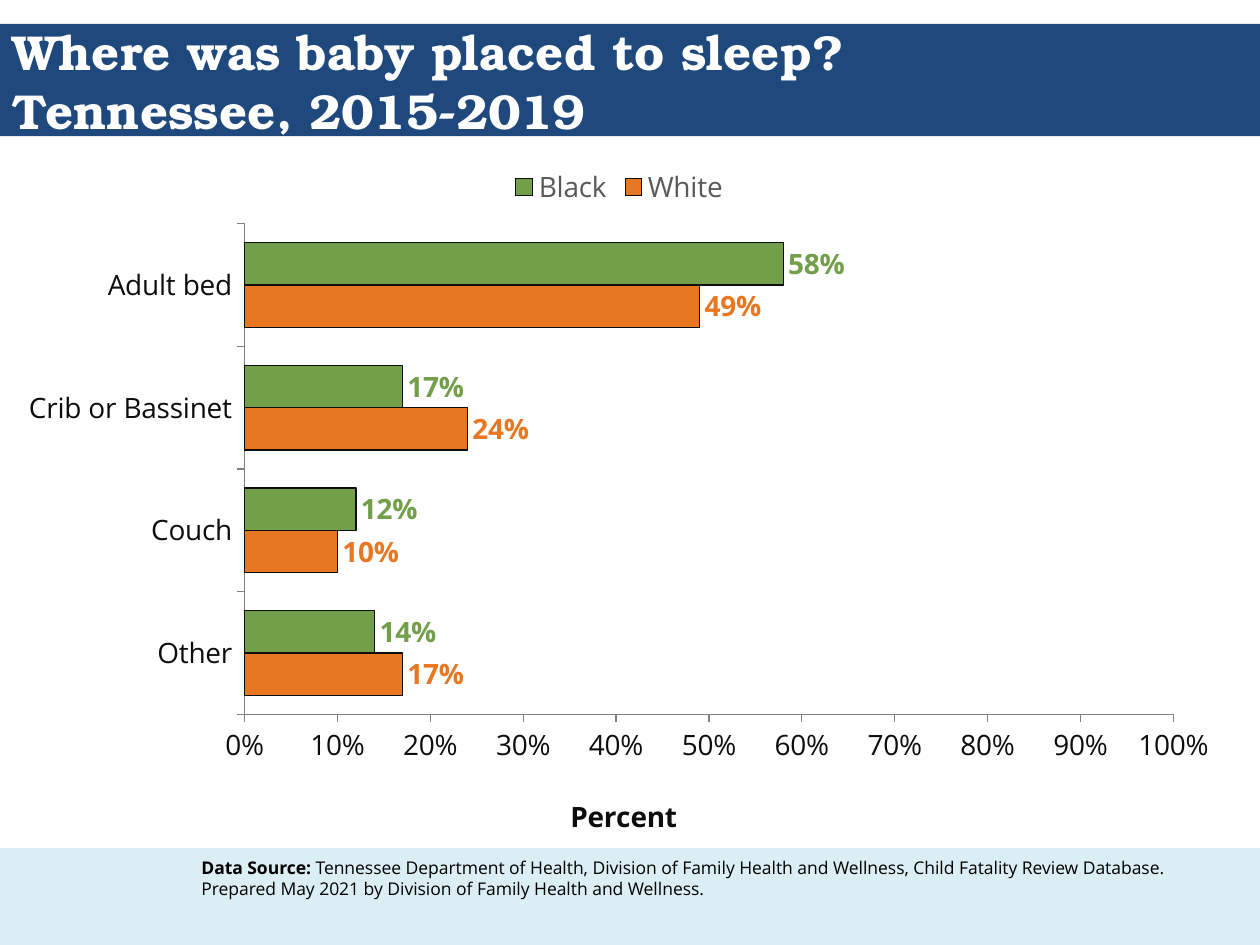
"""Build the slide on where babies were placed to sleep, by race."""
import pptx
import pptx.chart.data
import pptx.dml.color
import pptx.enum.chart
import pptx.enum.text
import pptx.enum.shapes
import pptx.oxml
import pptx.util
from pptx.util import Inches

TITLE = "Where was baby placed to sleep?\vTennessee, 2015-2019"
PLACES = ["Other", "Couch", "Crib or Bassinet", "Adult bed"]
SHARES = {"White": [0.17, 0.10, 0.24, 0.49], "Black": [0.14, 0.12, 0.17, 0.58]}
AXIS_TITLE = "Percent"
SOURCE = [
    ("Data Source: ", True),
    ("Tennessee Department of Health, Division of Family Health and Wellness, "
     "Child Fatality Review Database. Prepared May 2021 by Division of Family "
     "Health and Wellness.", False),
]
THEME = {
    "heading_font": "TeX Gyre Bonum", "body_font": "Open Sans",
    "title_size": 28, "chart_size": 16, "source_size": 10,
    "banner": "1F497D", "footer": "DBEEF4", "title": "FFFFFF", "source": "000000",
    "ink": "0D0D0D", "axis": "808080", "legend": "595959",
    "White": "E87722", "Black": "739F4B",
}
BANDS = [("footer", 6.73, 0.77), ("banner", 0.19, 0.89)]
PLOT_LAYOUT = {"layoutTarget": "inner", "xMode": "edge", "yMode": "edge",
               "x": 0.195, "y": 0.1, "w": 0.756, "h": 0.702}
AXIS_TITLE_LAYOUT = {"xMode": "edge", "yMode": "edge", "x": 0.456, "y": 0.91}


def colour(name):
    return pptx.dml.color.RGBColor.from_string(THEME[name])


def style(font, size, ink, bold=False, family="body_font"):
    font.name = THEME[family]
    font.size = pptx.util.Pt(THEME[size])
    font.bold = bold
    font.color.rgb = colour(ink)


def outline(line, ink):
    line.color.rgb = colour(ink)
    line.width = pptx.util.Pt(0.75)


def set_layout(element, values, after):
    for old in element.findall(pptx.oxml.ns.qn("c:layout")):
        element.remove(old)
    settings = "".join(f'<c:{key} val="{value}"/>' for key, value in values.items())
    layout = pptx.oxml.parse_xml(
        f'<c:layout {pptx.oxml.ns.nsdecls("c")}><c:manualLayout>{settings}'
        "</c:manualLayout></c:layout>")
    previous = element.find(pptx.oxml.ns.qn(after)) if after else None
    if previous is None:
        element.insert(0, layout)
    else:
        previous.addnext(layout)


def add_bands(slide, width):
    for name, top, height in BANDS:
        band = slide.shapes.add_shape(pptx.enum.shapes.MSO_SHAPE.RECTANGLE,
                                      0, Inches(top), width, Inches(height))
        band.shadow.inherit = False
        band.fill.solid()
        band.fill.fore_color.rgb = colour(name)
        band.line.fill.background()
        slide.shapes._spTree.insert(2, band._element)


def add_title(slide, width):
    title = slide.shapes.title
    title.left, title.top, title.width, title.height = 0, Inches(0.19), width, Inches(0.9)
    frame = title.text_frame
    frame.text = TITLE
    frame.auto_size = pptx.enum.text.MSO_AUTO_SIZE.NONE
    frame.vertical_anchor = pptx.enum.text.MSO_ANCHOR.MIDDLE
    heading = frame.paragraphs[0]
    heading.alignment = pptx.enum.text.PP_ALIGN.LEFT
    for run in heading.runs:
        style(run.font, "title_size", "title", True, "heading_font")


def add_source(slide):
    frame = slide.shapes.add_textbox(Inches(1.5), Inches(6.75),
                                     Inches(8.33), Inches(0.74)).text_frame
    frame.word_wrap = True
    for text, bold in SOURCE:
        run = frame.paragraphs[0].add_run()
        run.text = text
        style(run.font, "source_size", "source", bold)


def add_sleep_chart(slide):
    enums = pptx.enum.chart
    shares = pptx.chart.data.CategoryChartData(number_format="0%")
    shares.categories = PLACES
    for race, values in SHARES.items():
        shares.add_series(race, values)
    chart = slide.shapes.add_chart(enums.XL_CHART_TYPE.BAR_CLUSTERED, Inches(0.04),
                                   Inches(1.22), Inches(9.75), Inches(5.55), shares).chart
    style(chart.font, "chart_size", "ink")
    chart.has_title = False
    chart.has_legend = True
    chart.legend.position = enums.XL_LEGEND_POSITION.TOP
    chart.legend.include_in_layout = False
    style(chart.legend.font, "chart_size", "legend")

    for axis in (chart.category_axis, chart.value_axis):
        axis.has_major_gridlines = False
        axis.major_tick_mark = enums.XL_TICK_MARK.OUTSIDE
        style(axis.tick_labels.font, "chart_size", "ink")
        outline(axis.format.line, "axis")
    percent = chart.value_axis
    percent.minimum_scale, percent.maximum_scale, percent.major_unit = 0, 1, 0.1
    percent.tick_labels.number_format = "0%"
    percent.tick_labels.number_format_is_linked = False
    percent.axis_title.text_frame.text = AXIS_TITLE
    style(percent.axis_title.text_frame.paragraphs[0].runs[0].font,
          "chart_size", "ink", True)
    set_layout(percent.axis_title._element, AXIS_TITLE_LAYOUT, "c:tx")

    plot = chart.plots[0]
    plot.gap_width = 90
    plot.overlap = 0
    plot.vary_by_categories = False
    for series in plot.series:
        series.format.fill.solid()
        series.format.fill.fore_color.rgb = colour(series.name)
        outline(series.format.line, "ink")
        labels = series.data_labels
        labels.show_value = True
        labels.number_format = "0%"
        labels.number_format_is_linked = False
        labels.position = enums.XL_LABEL_POSITION.OUTSIDE_END
        style(labels.font, "chart_size", series.name, True)
    set_layout(chart._chartSpace.chart.plotArea, PLOT_LAYOUT, None)


def main():
    deck = pptx.Presentation()
    deck.slide_width, deck.slide_height = Inches(10), Inches(7.5)
    slide = deck.slides.add_slide(deck.slide_layouts[5])
    add_bands(slide, deck.slide_width)
    add_title(slide, deck.slide_width)
    add_source(slide)
    add_sleep_chart(slide)
    deck.save("out.pptx")


if __name__ == "__main__":
    main()
